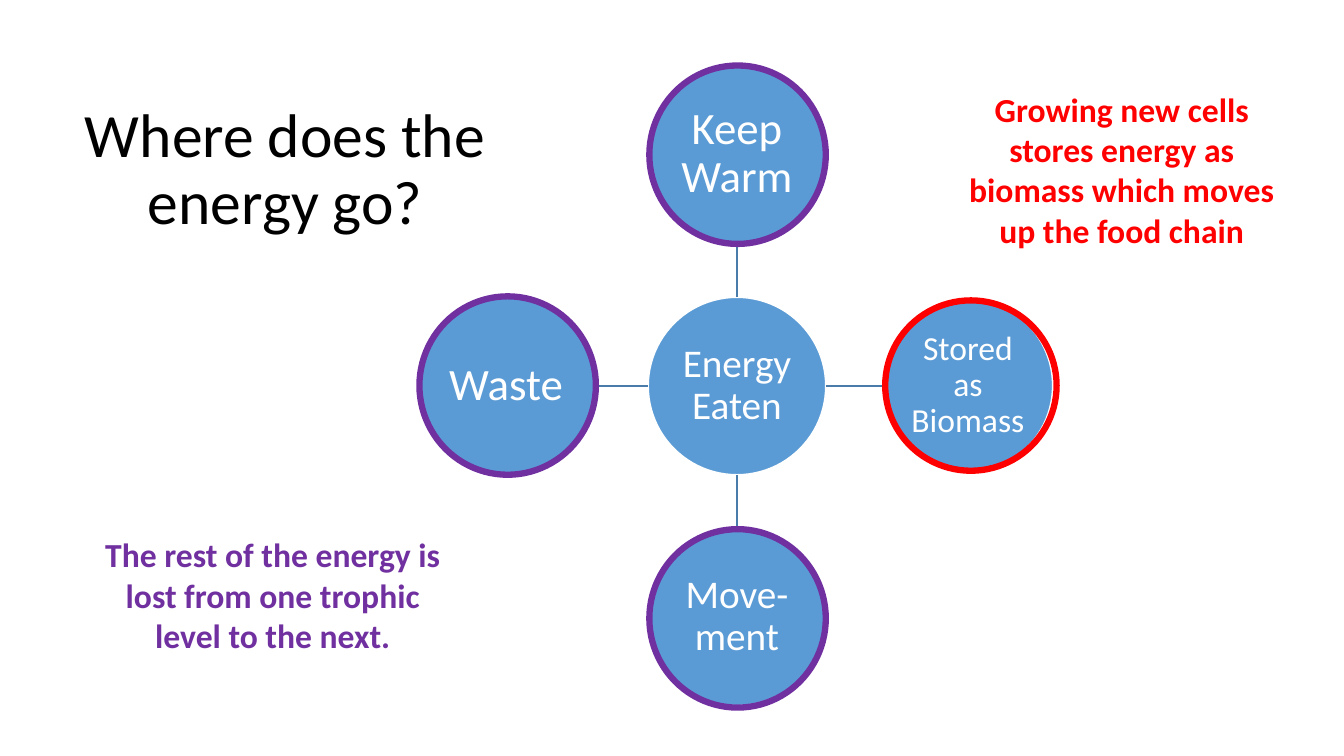
from dataclasses import dataclass
from typing import Optional

from lxml import etree
from pptx import Presentation
from pptx.dml.color import RGBColor
from pptx.enum import shapes, text
from pptx.oxml.ns import qn
from pptx.util import Inches, Pt


@dataclass(frozen=True)
class Theme:
    font: str = "Calibri"
    black: str = "000000"
    white: str = "FFFFFF"
    blue: str = "5B9BD5"
    link: str = "497CAB"
    stored: str = "FF0000"
    lost: str = "7030A0"
    title_size: int = 44
    note_size: int = 24
    large: int = 32
    medium: int = 28
    small: int = 24
    thin: float = 1
    thick: float = 4.5


@dataclass(frozen=True)
class Box:
    left: float
    top: float
    width: float
    height: float

    @property
    def center_x(self) -> float:
        return self.left + self.width / 2

    @property
    def center_y(self) -> float:
        return self.top + self.height / 2

    def emu(self) -> list:
        return [Inches(value) for value in (self.left, self.top, self.width, self.height)]


@dataclass(frozen=True)
class Bubble:
    label: str
    size: int
    box: Box
    ring: Optional[Box] = None
    ring_color: str = ""


@dataclass(frozen=True)
class Note:
    label: str
    box: Box
    size: int
    color: str
    bold: bool = True
    anchor: text.MSO_ANCHOR = text.MSO_ANCHOR.TOP
    spacing: float = 1.0


THEME = Theme()

HUB = Bubble("Energy Eaten", THEME.medium, Box(6.43, 2.95, 1.76, 1.76))
KEEP_WARM = Bubble("Keep Warm", THEME.large, Box(6.43, 0.65, 1.76, 1.76),
                   Box(6.44, 0.65, 1.75, 1.77), THEME.lost)
STORED = Bubble("Stored as Biomass", THEME.small, Box(8.76, 2.97, 1.68, 1.71),
                Box(8.78, 2.98, 1.7, 1.69), THEME.stored)
MOVEMENT = Bubble("Move-ment", THEME.medium, Box(6.43, 5.24, 1.76, 1.76),
                  Box(6.44, 5.25, 1.75, 1.77), THEME.lost)
WASTE = Bubble("Waste", THEME.large, Box(4.14, 2.95, 1.76, 1.76),
               Box(4.16, 2.94, 1.75, 1.77), THEME.lost)
USES = [KEEP_WARM, STORED, MOVEMENT, WASTE]

NOTES = [
    Note("Where does the energy go?", Box(0.28, 0.97, 5.1, 1.45), THEME.title_size,
         THEME.black, False, text.MSO_ANCHOR.MIDDLE, 0.9),
    Note("Growing new cells stores energy as biomass which moves up the food chain",
         Box(9.49, 0.83, 3.27, 1.72), THEME.note_size, THEME.stored),
    Note("The rest of the energy is lost from one trophic level to the next.",
         Box(0.88, 5.25, 3.65, 1.31), THEME.note_size, THEME.lost),
]


def write(shape, label: str, size: int, color: str, bold: bool = False,
          anchor: text.MSO_ANCHOR = text.MSO_ANCHOR.MIDDLE, spacing: float = 0.9) -> None:
    frame = shape.text_frame
    frame.word_wrap = True
    frame.vertical_anchor = anchor
    frame.text = label
    paragraph = frame.paragraphs[0]
    paragraph.alignment = text.PP_ALIGN.CENTER
    paragraph.line_spacing = spacing
    font = paragraph.runs[0].font
    font.name, font.size, font.bold = THEME.font, Pt(size), bold
    font.color.rgb = RGBColor.from_string(color)


def add_circle(slide, box: Box, line_color: str, line_width: float, fill: str = ""):
    """Draw an ellipse, left hollow when no fill is given."""
    circle = slide.shapes.add_shape(shapes.MSO_SHAPE.OVAL, *box.emu())
    circle.shadow.inherit = False
    if fill:
        circle.fill.solid()
        circle.fill.fore_color.rgb = RGBColor.from_string(fill)
    else:
        circle.fill.background()
    circle.line.color.rgb = RGBColor.from_string(line_color)
    circle.line.width = Pt(line_width)
    return circle


def add_bubble(slide, bubble: Bubble) -> None:
    circle = add_circle(slide, bubble.box, THEME.white, THEME.thin, THEME.blue)
    frame = circle.text_frame
    frame.margin_left = frame.margin_right = Inches(0.02)
    frame.margin_top = frame.margin_bottom = Inches(0.02)
    write(circle, bubble.label, bubble.size, THEME.white)


def add_link(slide, hub: Box, use: Box) -> None:
    """Join the facing edges of the hub and one use of energy."""
    step_x, step_y = use.center_x - hub.center_x, use.center_y - hub.center_y
    if abs(step_x) > abs(step_y):
        sign = 1 if step_x > 0 else -1
        ends = (hub.center_x + sign * hub.width / 2, hub.center_y,
                use.center_x - sign * use.width / 2, hub.center_y)
    else:
        sign = 1 if step_y > 0 else -1
        ends = (hub.center_x, hub.center_y + sign * hub.height / 2,
                hub.center_x, use.center_y - sign * use.height / 2)
    link = slide.shapes.add_connector(shapes.MSO_CONNECTOR.STRAIGHT,
                                      *[Inches(value) for value in ends])
    link.line.color.rgb = RGBColor.from_string(THEME.link)
    link.line.width = Pt(THEME.thin)
    etree.SubElement(link._element.spPr, qn("a:effectLst"))


def add_note(slide, note: Note) -> None:
    box = slide.shapes.add_textbox(*note.box.emu())
    write(box, note.label, note.size, note.color, note.bold, note.anchor, note.spacing)


def main() -> None:
    presentation = Presentation()
    presentation.slide_width, presentation.slide_height = Inches(13.33), Inches(7.5)
    slide = presentation.slides.add_slide(presentation.slide_layouts[6])
    add_bubble(slide, HUB)
    for use in USES:
        add_link(slide, HUB.box, use.box)
        add_bubble(slide, use)
    for use in USES:
        add_circle(slide, use.ring, use.ring_color, THEME.thick)
    for note in NOTES:
        add_note(slide, note)
    presentation.save("out.pptx")


if __name__ == "__main__":
    main()
